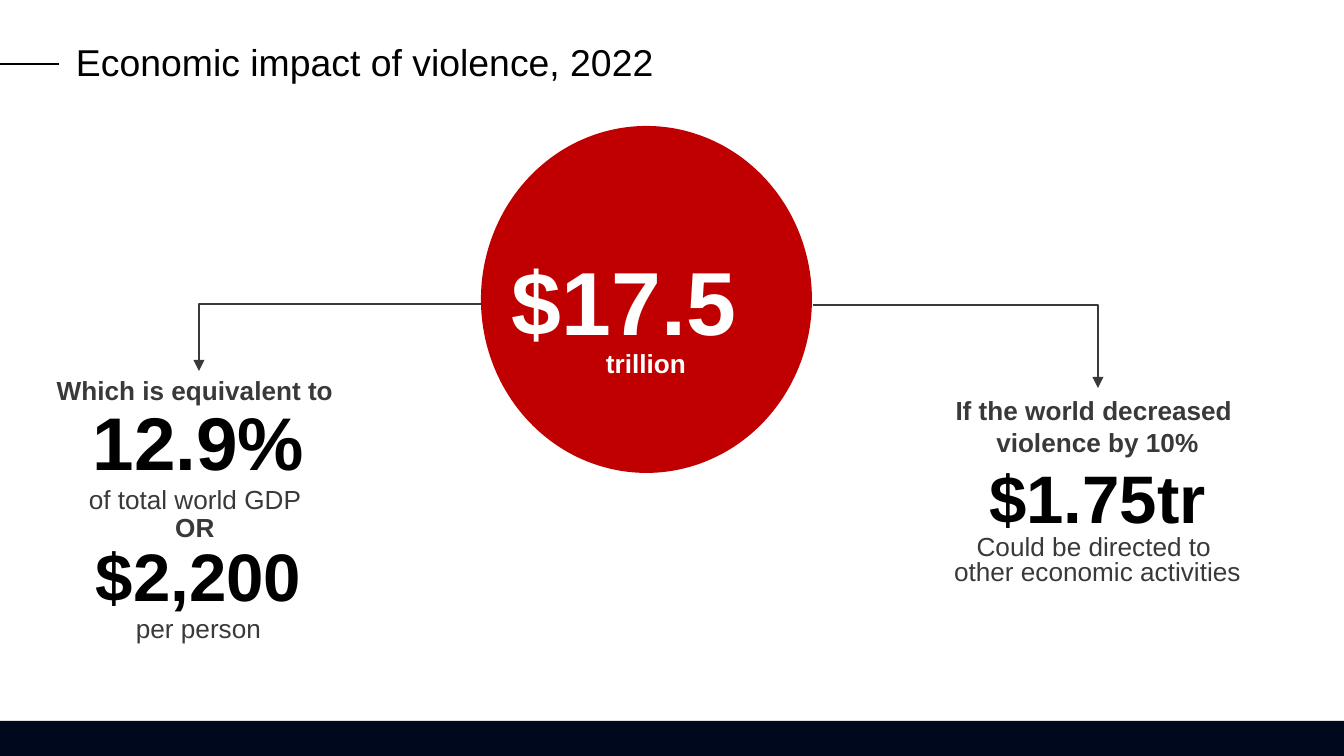
from lxml import etree
from pptx import Presentation
from pptx.dml.color import RGBColor
from pptx.enum.shapes import MSO_CONNECTOR as CONN, MSO_SHAPE as SHAPE
from pptx.enum.text import MSO_ANCHOR as ANCHOR, MSO_AUTO_SIZE as AUTO, PP_ALIGN as ALIGN
from pptx.oxml.ns import qn
from pptx.util import Emu, Pt

FONT = "Arial"
BLACK = RGBColor(0x00, 0x00, 0x00)
WHITE = RGBColor(0xFF, 0xFF, 0xFF)
GREY = RGBColor(0x39, 0x39, 0x39)
RED = RGBColor(0xC0, 0x00, 0x00)
NAVY = RGBColor(0x00, 0x08, 0x1D)


def px(*lengths):
    """Pixels at 134.4 to the inch, as EMU."""
    return [Emu(round(n * 914400 / 134.4)) for n in lengths]


def write(p, text, size=14, color=GREY, bold=False, align=ALIGN.CENTER, spacing=0.9):
    p.alignment, p.line_spacing = align, spacing
    p.space_before = Pt(0)
    r = p.add_run()
    r.text = text
    r.font.name, r.font.size, r.font.bold = FONT, Pt(size), bold
    r.font.color.rgb = color


def set_frame(tf, inset, anchor=ANCHOR.TOP):
    tf.word_wrap, tf.auto_size, tf.vertical_anchor = True, AUTO.NONE, anchor
    tf.margin_left = tf.margin_right = Pt(7.2 * inset)
    tf.margin_top = tf.margin_bottom = Pt(3.6 * inset)


def add_text(s, box, lines, inset=1, **common):
    """Each line is a text and its own format."""
    tf = s.shapes.add_textbox(*px(*box)).text_frame
    set_frame(tf, inset)
    for i, (text, fmt) in enumerate(lines):
        p = tf.add_paragraph() if i else tf.paragraphs[0]
        write(p, text, **{**common, **fmt})


def add_title(s, box, text):
    title = s.shapes.title
    title.left, title.top, title.width, title.height = px(*box)
    set_frame(title.text_frame, 0, ANCHOR.MIDDLE)
    write(title.text_frame.paragraphs[0], text, size=20, color=BLACK, align=ALIGN.LEFT)


def add_filled(s, kind, box, color):
    sp = s.shapes.add_shape(kind, *px(*box))
    sp.shadow.inherit = False
    sp.fill.solid()
    sp.fill.fore_color.rgb = color
    sp.line.fill.background()


def add_line(s, kind, ends, color):
    c = s.shapes.add_connector(kind, *px(*ends))
    c.line.color.rgb, c.line.width = color, Pt(1.5)
    etree.SubElement(c._element.spPr, qn("a:effectLst"))
    return c


def add_elbow_arrow(s, ends):
    """One bend: across, then down to the arrowhead."""
    c = add_line(s, CONN.ELBOW, ends, GREY)
    c._element.spPr.find(qn("a:prstGeom")).set("prst", "bentConnector2")
    ln = c._element.spPr.find(qn("a:ln"))
    etree.SubElement(ln, qn("a:tailEnd"), type="triangle")


def main():
    prs = Presentation()
    prs.slide_width, prs.slide_height = px(1344, 756)
    s = prs.slides.add_slide(prs.slide_layouts[5])
    bold = {"bold": True}
    figure = {"size": 36, "color": BLACK, "bold": True}

    # Footer band, title and its rule
    add_filled(s, SHAPE.RECTANGLE, (0, 721, 1344, 35), NAVY)
    add_title(s, (76, 44, 741, 40), "Economic impact of violence, 2022")
    add_line(s, CONN.STRAIGHT, (59, 64, 0, 64), BLACK)

    # Left branch: equivalents
    add_elbow_arrow(s, (485, 304, 199, 371))
    add_text(s, (42, 371, 313, 282), [
        ("Which is equivalent to ", bold),
        ("12.9%", {**figure, "size": 40}),
        ("of total world GDP ", {}),
        ("OR ", bold),
        ("$2,200", figure),
        ("per person", {}),
    ])

    # Right branch: effect of a decrease
    add_elbow_arrow(s, (813, 305, 1098, 388))
    add_text(s, (880, 388, 435, 77), [
        ("If the world decreased ", bold),
        ("violence by 10%", bold),
    ], spacing=1.0)
    add_text(s, (880, 465, 435, 129), [
        ("$1.75tr", figure),
        ("Could be directed to ", {}),
        ("other economic activities", {}),
    ], spacing=0.8)

    # Central total
    add_filled(s, SHAPE.OVAL, (481, 126, 331, 347), RED)
    add_text(s, (512, 258, 314, 93), [("$17.5", {"size": 48})],
             inset=0, color=WHITE, bold=True, align=ALIGN.LEFT)
    add_text(s, (310, 347, 672, 39), [("trillion", {})],
             color=WHITE, bold=True, spacing=0.8)

    prs.save("out.pptx")


if __name__ == "__main__":
    main()
